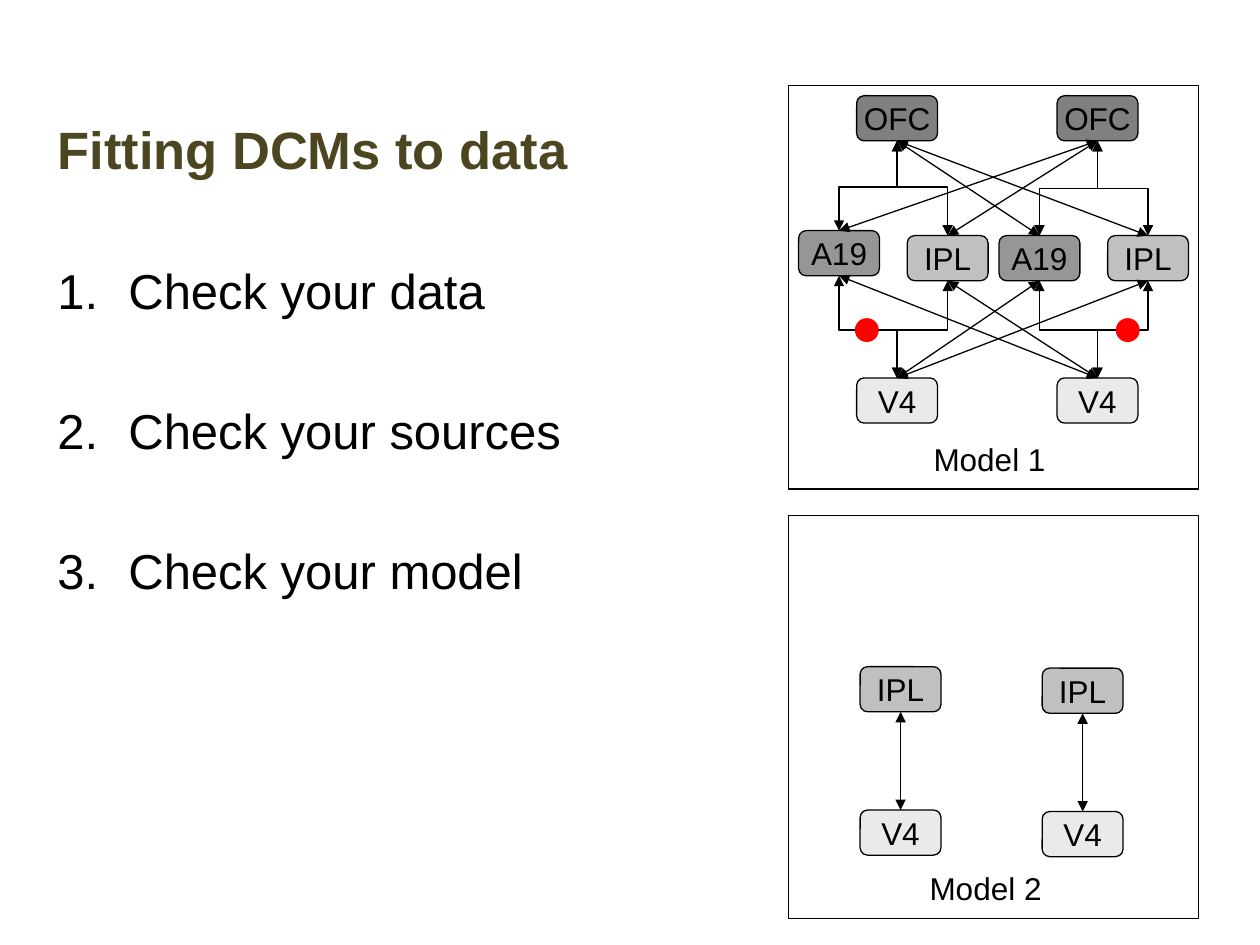
"""Build the slide on fitting DCMs to data, with its two model diagrams."""
from dataclasses import dataclass
from itertools import product

from lxml.etree import SubElement
from pptx import Presentation
from pptx.dml.color import RGBColor as RGB
from pptx.enum.shapes import MSO_CONNECTOR as CONN, MSO_SHAPE as SHAPE
from pptx.enum.text import MSO_ANCHOR as ANCHOR, MSO_AUTO_SIZE as AUTO, PP_ALIGN as ALIGN
from pptx.oxml.ns import qn
from pptx.util import Cm, Pt


@dataclass(frozen=True)
class Theme:
    font: str = "Arial"
    ink: str = "000000"
    title: str = "4B4620"
    marker: str = "FF0000"
    title_pt: float = 30
    body_pt: float = 28
    label_pt: float = 18
    line_pt: float = 0.75
    marker_pt: float = 2


REGION_FILLS = {"V4": "EAEAEA", "IPL": "C0C0C0", "A19": "969696", "OFC": "808080"}
NODE_W, NODE_H = 1.63, 0.91
TOP, BOTTOM = 0, 2


class Deck:
    def __init__(self, theme):
        self.theme = theme
        self.prs = Presentation()
        self.prs.slide_width, self.prs.slide_height = Cm(25.4), Cm(19.05)
        self.s = self.prs.slides.add_slide(self.prs.slide_layouts[6])

    def apply(self, obj, fmt):
        for name, value in fmt.items():
            setattr(obj, name, value)

    def apply_xml(self, el, attrs):
        for name, value in attrs.items():
            el.set(name, str(int(value)))

    def run(self, p, text, size, color=None, bold=False):
        r = p.add_run()
        r.text = text
        self.apply(r.font, {"name": self.theme.font, "size": Pt(size), "bold": bold})
        r.font.color.rgb = RGB.from_string(color or self.theme.ink)

    def text_box(self, x, y, w, h, auto=AUTO.NONE):
        tf = self.s.shapes.add_textbox(Cm(x), Cm(y), Cm(w), Cm(h)).text_frame
        self.apply(tf, {"word_wrap": True, "auto_size": auto})
        return tf

    def title(self, text, x, y, w, h):
        p = self.text_box(x, y, w, h).paragraphs[0]
        self.run(p, text, self.theme.title_pt, self.theme.title, True)

    def caption(self, text, x, y):
        p = self.text_box(x, y, 3.25, 1.02, AUTO.SHAPE_TO_FIT_TEXT).paragraphs[0]
        self.run(p, text, self.theme.label_pt)

    def numbered(self, items, x, y, w, h):
        tf = self.text_box(x, y, w, h)
        for i, item in enumerate(items):
            p = tf.add_paragraph() if i else tf.paragraphs[0]
            if i:
                p.space_before = Pt(46.3)
            pPr = p._p.get_or_add_pPr()
            self.apply_xml(pPr, {"marL": Cm(1.43), "indent": -Cm(1.43)})
            SubElement(pPr, qn("a:buFont"), typeface=self.theme.font)
            SubElement(pPr, qn("a:buAutoNum"), type="arabicPeriod")
            self.run(p, item, self.theme.body_pt)

    def shape(self, kind, x, y, w, h, fill=None, line=None, width=None):
        sp = self.s.shapes.add_shape(kind, Cm(x), Cm(y), Cm(w), Cm(h))
        sp.shadow.inherit = False
        if fill:
            sp.fill.solid()
            sp.fill.fore_color.rgb = RGB.from_string(fill)
        else:
            sp.fill.background()
        sp.line.color.rgb = RGB.from_string(line or self.theme.ink)
        sp.line.width = Pt(width or self.theme.line_pt)
        return sp

    def frame(self, x, y):
        self.shape(SHAPE.RECTANGLE, x, y, 8.26, 8.13)

    def marker(self, x, y):
        t = self.theme
        self.shape(SHAPE.OVAL, x, y, 0.41, 0.41, t.marker, t.marker, t.marker_pt)

    def node(self, region, x, y):
        sp = self.shape(SHAPE.ROUNDED_RECTANGLE, x, y, NODE_W, NODE_H, REGION_FILLS[region])
        tf = sp.text_frame
        self.apply(tf, {"word_wrap": False, "vertical_anchor": ANCHOR.MIDDLE, "margin_left": 0,
                        "margin_right": 0, "margin_top": 0, "margin_bottom": 0})
        tf.paragraphs[0].alignment = ALIGN.CENTER
        self.run(tf.paragraphs[0], region, self.theme.label_pt)
        return sp

    def connector(self, kind, x1, y1, x2, y2):
        cx = self.s.shapes.add_connector(kind, x1, y1, x2, y2)
        cx.line.color.rgb = RGB.from_string(self.theme.ink)
        cx.line.width = Pt(self.theme.line_pt)
        spPr = cx._element.spPr
        for end in ("a:headEnd", "a:tailEnd"):
            SubElement(spPr.find(qn("a:ln")), qn(end), type="triangle")
        SubElement(spPr, qn("a:effectLst"))
        return cx

    def straight(self, lower, upper):
        cx = self.connector(CONN.STRAIGHT, 0, 0, 0, 0)
        cx.begin_connect(lower, TOP)
        cx.end_connect(upper, BOTTOM)

    def elbow(self, lower, upper, rail):
        x1, x2 = (sp.left + sp.width // 2 for sp in (lower, upper))
        y1, y2 = lower.top, upper.top + upper.height
        w, h = y1 - y2, abs(x2 - x1)
        left, top = (x1 + x2 - w) // 2, (y1 + y2 - h) // 2
        cx = self.connector(CONN.ELBOW, left, top, left + w, top + h)
        spPr = cx._element.spPr
        turn = {"rot": 270 * 60000} if x2 > x1 else {"rot": 90 * 60000, "flipH": 1}
        self.apply_xml(spPr.find(qn("a:xfrm")), turn)
        bend = round((y1 - Cm(rail)) / w * 100000)
        av = spPr.find(qn("a:prstGeom")).get_or_add_avLst()
        SubElement(av, qn("a:gd"), name="adj1", fmla=f"val {bend}")


def full_model(d):
    sides = []
    for x, a19_y, upper_rail in ((17.27, 4.65, 3.77), (21.31, 4.75, 3.8)):
        places = {"V4": (x, 7.62), "IPL": (x + 1.02, 4.75),
                  "A19": (x - 1.17, a19_y), "OFC": (x, 1.93)}
        n = {region: d.node(region, *at) for region, at in places.items()}
        for mid in ("IPL", "A19"):
            d.elbow(n["V4"], n[mid], 6.65)
            d.elbow(n[mid], n["OFC"], upper_rail)
        sides.append(n)
    for (near, far), mid in product((sides, sides[::-1]), ("A19", "IPL")):
        d.straight(near["V4"], far[mid])
        d.straight(near[mid], far["OFC"])
    for x in (17.27, 22.53):
        d.marker(x, 6.45)


def reduced_model(d):
    for x, y in ((17.34, 13.44), (21.01, 13.47)):
        ipl = d.node("IPL", x, y)
        d.straight(d.node("V4", x, y + 2.89), ipl)


def main():
    d = Deck(Theme())
    d.title("Fitting DCMs to data", 0.91, 2.24, 23.57, 3.61)
    d.numbered(["Check your data", "Check your sources", "Check your model"],
               0.91, 5.13, 23.57, 12.01)
    models = ((full_model, "Model 1", 18.57, 1.73), (reduced_model, "Model 2", 18.49, 10.39))
    for draw, name, x, y in models:
        d.frame(15.9, y)
        draw(d)
        d.caption(name, x, y + 7.01)
    d.prs.save("out.pptx")


if __name__ == "__main__":
    main()
